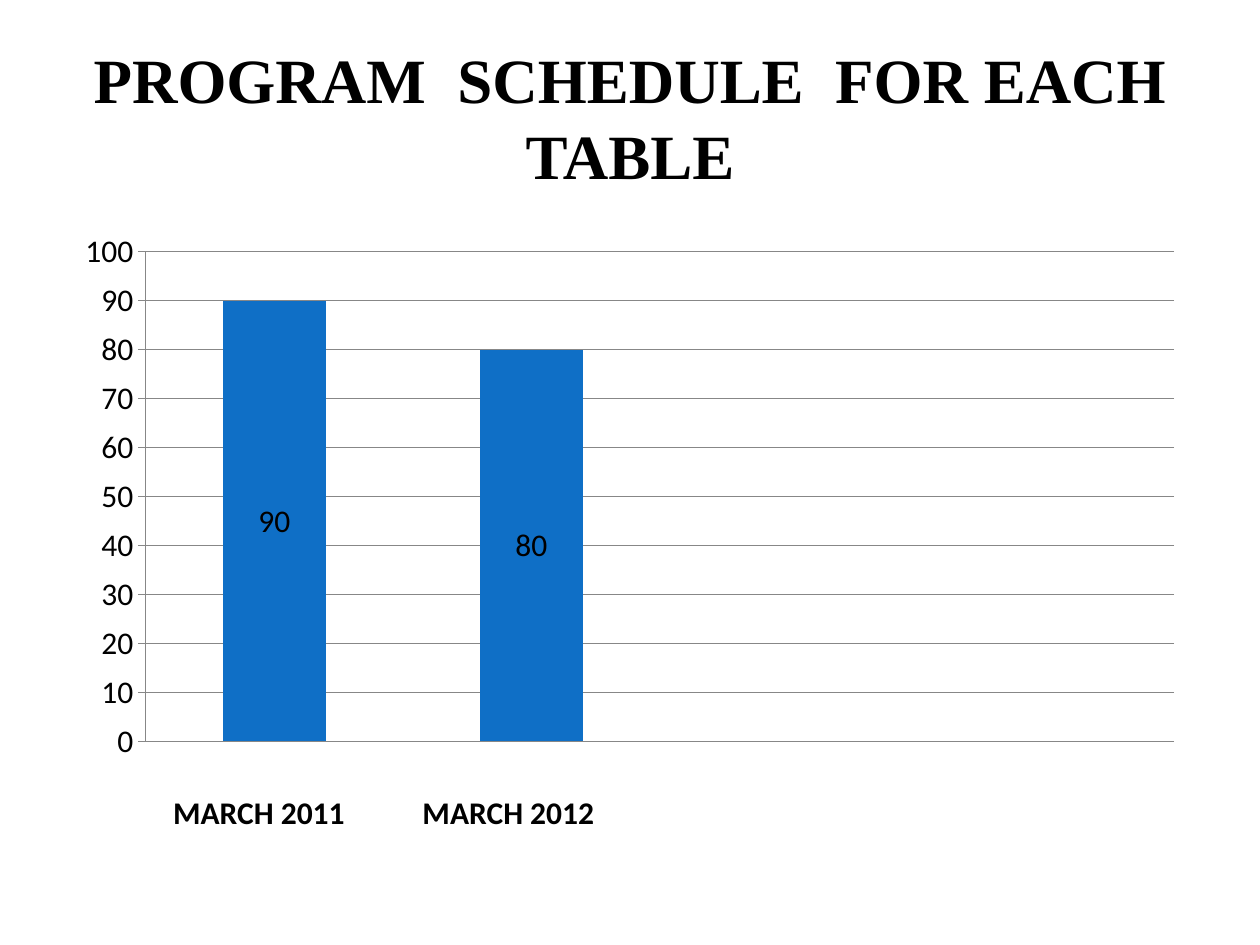
from dataclasses import dataclass

from lxml import etree
from pptx import Presentation
from pptx.chart.data import CategoryChartData
from pptx.dml.color import RGBColor
from pptx.enum import chart as charts, text as texts
from pptx.oxml import ns
from pptx.util import Pt

BLACK, BLUE, GREY = "000000", "0F6FC6", "878787"


@dataclass
class Bar:
    label: str
    value: int
    label_center: float


BARS = [Bar("MARCH 2011", 90, 148), Bar("MARCH 2012", 80, 290.5)]
SLOTS = 4  # the last two slots of the chart stay empty


def color(value: str) -> RGBColor:
    return RGBColor.from_string(value)


def format_font(font, *, size: float, name: str = "Calibri", bold: bool = False) -> None:
    font.name, font.size, font.bold = name, Pt(size), bold
    font.color.rgb = color(BLACK)


def write_text(shape, text: str, **font_format) -> None:
    frame = shape.text_frame
    frame.word_wrap = True
    frame.vertical_anchor = texts.MSO_ANCHOR.MIDDLE
    paragraph = frame.paragraphs[0]
    paragraph.alignment = texts.PP_ALIGN.CENTER
    run = paragraph.add_run()
    run.text = text
    format_font(run.font, **font_format)


def format_line(line) -> None:
    line.color.rgb = color(GREY)
    line.width = Pt(0.75)


def place_plot(chart, **fractions: float) -> None:
    """Set the inner plot area as fractions of the chart frame."""
    plot_area = chart._chartSpace.chart.plotArea
    for old_layout in plot_area.findall(ns.qn("c:layout")):
        plot_area.remove(old_layout)
    layout = etree.Element(ns.qn("c:layout"))
    manual = etree.SubElement(layout, ns.qn("c:manualLayout"))
    settings = {"layoutTarget": "inner", "xMode": "edge", "yMode": "edge", **fractions}
    for tag, value in settings.items():
        etree.SubElement(manual, ns.qn(f"c:{tag}")).set("val", str(value))
    plot_area.insert(0, layout)


def add_bar_chart(slide) -> None:
    data = CategoryChartData()
    empty = SLOTS - len(BARS)
    data.categories = [str(i + 1) for i in range(len(BARS))] + [""] * empty
    data.add_series("Series 1", [bar.value for bar in BARS] + [None] * empty)
    chart = slide.shapes.add_chart(
        charts.XL_CHART_TYPE.COLUMN_STACKED, Pt(36), Pt(126), Pt(648), Pt(356.4), data
    ).chart
    chart.has_legend = chart.has_title = False
    format_font(chart.font, size=18)
    place_plot(chart, x=0.073, y=0.05, w=0.907, h=0.785)

    # Bars and their values
    plot = chart.plots[0]
    plot.gap_width, plot.overlap = 150, 100
    plot.vary_by_categories = False
    fill = plot.series[0].format.fill
    fill.solid()
    fill.fore_color.rgb = color(BLUE)
    labels = plot.series[0].data_labels
    labels.show_value = True
    format_font(labels.font, size=18)

    # Axes
    chart.category_axis.visible = False
    axis = chart.value_axis
    axis.minimum_scale, axis.maximum_scale, axis.major_unit = 0, 100, 10
    axis.major_tick_mark = charts.XL_TICK_MARK.OUTSIDE
    axis.has_major_gridlines = True
    format_line(axis.format.line)
    format_line(axis.major_gridlines.format.line)


def add_bar_label(slide, bar: Bar) -> None:
    width, height = 130, 30
    box = slide.shapes.add_textbox(
        Pt(bar.label_center - width / 2), Pt(449), Pt(width), Pt(height)
    )
    write_text(box, bar.label, size=18, bold=True)


def main() -> None:
    presentation = Presentation()
    presentation.slide_width, presentation.slide_height = Pt(720), Pt(540)
    slide = presentation.slides.add_slide(presentation.slide_layouts[5])

    # Title
    title = slide.shapes.title
    title.left, title.top, title.width, title.height = Pt(36), Pt(21.6), Pt(648), Pt(90)
    write_text(title, "PROGRAM  SCHEDULE  FOR EACH TABLE",
               size=36, name="Times New Roman", bold=True)

    # Chart with a caption under each bar
    add_bar_chart(slide)
    for bar in BARS:
        add_bar_label(slide, bar)

    presentation.save("out.pptx")


if __name__ == "__main__":
    main()
